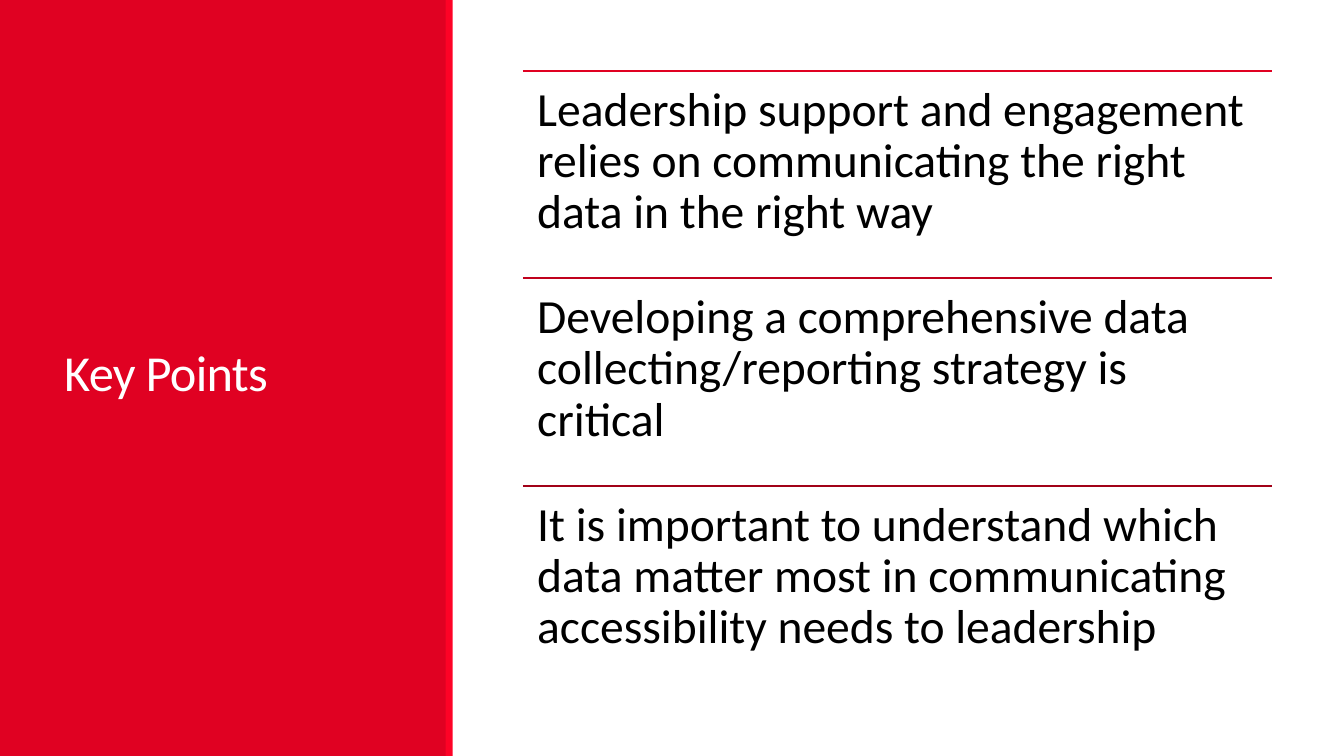
from dataclasses import dataclass

from lxml import etree
from pptx import Presentation
from pptx import util as u
from pptx.dml.color import RGBColor
from pptx.enum import shapes as sh, text as tx
from pptx.oxml import ns


@dataclass(frozen=True)
class Theme:
    font: str = "Calibri"
    red: str = "E00122"
    bright: str = "FE0226"
    white: str = "FFFFFF"
    black: str = "000000"
    title: float = 36
    body: float = 34
    rule: float = 1.25


@dataclass(frozen=True)
class Box:
    left: float
    top: float
    width: float
    height: float

    def size(self) -> list[u.Cm]:
        return [u.Cm(v) for v in (self.left, self.top, self.width, self.height)]


@dataclass(frozen=True)
class Band:
    box: Box
    color: str


@dataclass(frozen=True)
class Point:
    words: str
    color: str


@dataclass(frozen=True)
class Label:
    words: str
    size: float
    color: str
    lead: float
    anchor: tx.MSO_ANCHOR
    pad_x: float
    pad_y: float


THEME = Theme()
WIDTH, HEIGHT = 33.87, 19.05
TITLE = Box(1.37, 1.45, 8.56, 16.03)
FIRST = Box(13.18, 1.78, 18.87, 5.23)

BANDS = [
    Band(Box(0, 0, 11.25, HEIGHT), THEME.red),
    Band(Box(11.23, 0, 0.18, HEIGHT), THEME.bright),
]
POINTS = [
    Point("Leadership support and engagement relies on communicating "
          "the right data in the right way", THEME.red),
    Point("Developing a comprehensive data collecting/reporting "
          "strategy is critical", "C0011D"),
    Point("It is important to understand which data matter most in "
          "communicating accessibility needs to leadership", "A10118"),
]


def add_band(slide, band: Band) -> None:
    shape = slide.shapes.add_shape(sh.MSO_SHAPE.RECTANGLE, *band.box.size())
    shape.shadow.inherit = False
    shape.fill.solid()
    shape.fill.fore_color.rgb = RGBColor.from_string(band.color)
    shape.line.fill.background()


def add_rule(slide, box: Box, color: str) -> None:
    left, top, width, _ = box.size()
    rule = slide.shapes.add_connector(
        sh.MSO_CONNECTOR.STRAIGHT, left, top, left + width, top)
    rule.line.color.rgb = RGBColor.from_string(color)
    rule.line.width = u.Pt(THEME.rule)
    etree.SubElement(rule._element.spPr, ns.qn("a:effectLst"))


def add_label(slide, box: Box, label: Label):
    frame = slide.shapes.add_textbox(*box.size()).text_frame
    frame.word_wrap = True
    frame.vertical_anchor = label.anchor
    frame.margin_left = frame.margin_right = u.Cm(label.pad_x)
    frame.margin_top = frame.margin_bottom = u.Cm(label.pad_y)
    para = frame.paragraphs[0]
    para.text = label.words
    para.line_spacing = label.lead
    para.font.name = THEME.font
    para.font.size = u.Pt(label.size)
    para.font.color.rgb = RGBColor.from_string(label.color)
    return para


def main() -> None:
    deck = Presentation()
    deck.slide_width, deck.slide_height = u.Cm(WIDTH), u.Cm(HEIGHT)
    slide = deck.slides.add_slide(deck.slide_layouts[6])

    # Red side panel
    for band in BANDS:
        add_band(slide, band)

    # Title, with slightly tightened letters
    title = Label("Key Points", THEME.title, THEME.white, 0.85,
                  tx.MSO_ANCHOR.MIDDLE, 0.25, 0.13)
    para = add_label(slide, TITLE, title)
    para.runs[0]._r.get_or_add_rPr().set("spc", "-50")

    # Ruled list of points
    for i, point in enumerate(POINTS):
        box = Box(FIRST.left, FIRST.top + i * FIRST.height,
                  FIRST.width, FIRST.height)
        add_rule(slide, box, point.color)
        add_label(slide, box, Label(point.words, THEME.body, THEME.black, 0.9,
                                    tx.MSO_ANCHOR.TOP, 0.36, 0.36))

    deck.save("out.pptx")


if __name__ == "__main__":
    main()
